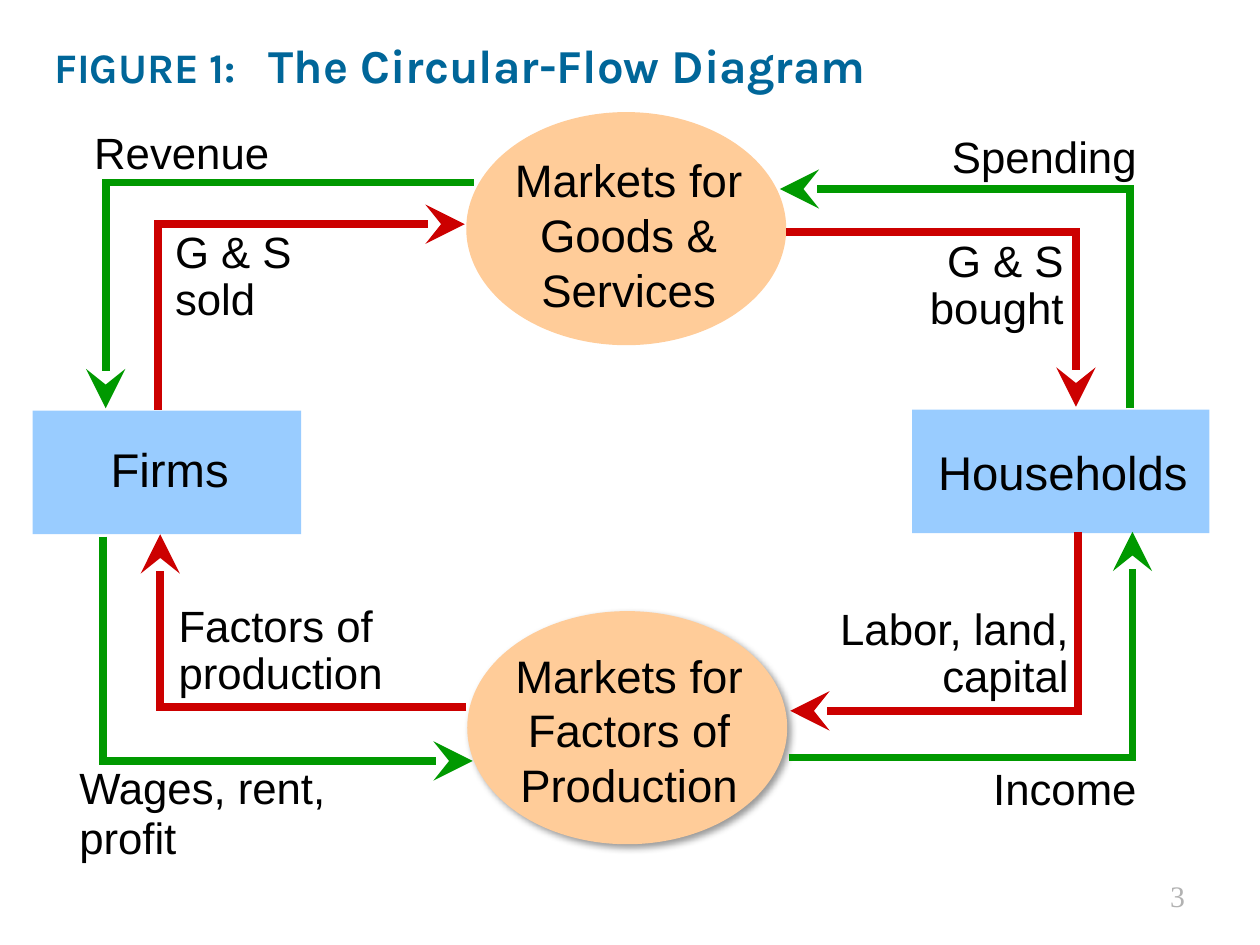
from lxml import etree
from pptx import Presentation
from pptx import util as u
from pptx.dml.color import RGBColor
from pptx.enum import shapes, text
from pptx.oxml.ns import qn

TITLE_BLUE = RGBColor(0x00, 0x66, 0x99)
PEACH = RGBColor(0xFF, 0xCC, 0x99)
SKY = RGBColor(0x99, 0xCC, 0xFF)
MONEY_GREEN = RGBColor(0x00, 0x99, 0x00)
GOODS_RED = RGBColor(0xCC, 0x00, 0x00)
BLACK = RGBColor(0x00, 0x00, 0x00)
GRAY = RGBColor(0xB2, 0xB2, 0xB2)

LEFT, CENTER, RIGHT = text.PP_ALIGN.LEFT, text.PP_ALIGN.CENTER, text.PP_ALIGN.RIGHT
OVAL, BOX = shapes.MSO_SHAPE.OVAL, shapes.MSO_SHAPE.RECTANGLE
HALF_LINE = 0.08

NODES = [
    (OVAL, PEACH, (9.4, 2.26, 6.45, 4.7), "Markets for Goods & Services", (9.65, 2.95, 6.05, 3.56), 26),
    (OVAL, PEACH, (9.42, 12.32, 6.45, 4.7), "Markets for Factors of Production", (9.32, 12.93, 6.73, 3.56), 26),
    (BOX, SKY, (18.39, 8.26, 5.99, 2.49), "Households", (18.54, 8.81, 5.77, 1.4), 27),
    (BOX, SKY, (0.66, 8.28, 5.41, 2.49), "Firms", (1.17, 8.76, 4.5, 1.4), 27),
]

FLOWS = [
    (MONEY_GREEN, [(9.55, 3.68), (2.13, 3.68), (2.13, 8.23)],
     "Revenue", (1.65, 2.41, 8.03, 1.32), LEFT, 1),
    (GOODS_RED, [(3.18, 8.26), (3.18, 4.52), (9.37, 4.52)],
     "G & S sold", (3.28, 4.52, 3.63, 2.16), LEFT, 0.9),
    (MONEY_GREEN, [(22.78, 8.23), (22.78, 3.81), (15.72, 3.81)],
     "Spending", (16.51, 2.49, 6.65, 1.32), RIGHT, 1),
    (GOODS_RED, [(15.85, 4.67), (21.69, 4.67), (21.69, 8.2)],
     "G & S bought", (18.06, 4.7, 3.63, 2.16), RIGHT, 0.9),
    (GOODS_RED, [(21.74, 10.72), (21.74, 14.33), (15.93, 14.33)],
     "Labor, land, capital", (16.23, 12.12, 5.56, 2.16), RIGHT, 0.9),
    (MONEY_GREEN, [(15.9, 15.27), (22.83, 15.27), (22.83, 10.72)],
     "Income", (16.84, 15.24, 6.32, 1.32), RIGHT, 1),
    (GOODS_RED, [(9.4, 14.25), (3.23, 14.25), (3.23, 10.77)],
     "Factors of production", (3.35, 12.07, 5.56, 2.16), LEFT, 0.9),
    (MONEY_GREEN, [(2.08, 10.82), (2.08, 15.34), (9.53, 15.34)],
     "Wages, rent, profit", (1.35, 15.29, 6.2, 2.26), LEFT, 0.95),
]


def cm(values):
    """Turn numbers in centimetres into lengths."""
    return [u.Cm(value) for value in values]


def add_title(slide):
    """Fill the title placeholder with the figure number and its name."""
    title = slide.shapes.title
    title.left, title.top, title.width, title.height = cm((0.84, 0.46, 22.86, 1.7))
    frame = title.text_frame
    frame.vertical_anchor = text.MSO_ANCHOR.MIDDLE
    frame.auto_size = text.MSO_AUTO_SIZE.NONE
    paragraph = frame.paragraphs[0]
    paragraph.alignment = LEFT
    for words, size in (("FIGURE 1:\t", 24), ("The Circular-Flow Diagram", 27)):
        run = paragraph.add_run()
        run.text = words
        run.font.size = u.Pt(size)
        run.font.name = "Karla"
        run.font.bold = True
        run.font.color.rgb = TITLE_BLUE
    tabs = etree.SubElement(paragraph._p.get_or_add_pPr(), qn("a:tabLst"))
    etree.SubElement(tabs, qn("a:tab"), pos=str(u.Cm(4.32)), algn="l")


def add_label(slide, words, place, size, align, spacing=1, font="Arial", color=BLACK):
    """Add a wrapped text box."""
    frame = slide.shapes.add_textbox(*cm(place)).text_frame
    frame.word_wrap = True
    paragraph = frame.paragraphs[0]
    paragraph.text = words
    paragraph.alignment = align
    paragraph.line_spacing = spacing
    paragraph.font.name = font
    paragraph.font.size = u.Pt(size)
    paragraph.font.color.rgb = color


def add_node(slide, kind, fill, place, words, label_place, size):
    """Add a filled shape with its label and return the shape."""
    shape = slide.shapes.add_shape(kind, *cm(place))
    shape.shadow.inherit = False
    shape.fill.solid()
    shape.fill.fore_color.rgb = fill
    shape.line.fill.background()
    add_label(slide, words, label_place, size, CENTER)
    return shape


def add_shadow(shape):
    """Give a shape a soft shadow to the lower right."""
    effects = shape._element.spPr.find(qn("a:effectLst"))
    shadow = etree.SubElement(effects, qn("a:outerShdw"), blurRad=str(u.Pt(4)),
                              dist=str(u.Pt(3)), dir="2700000", algn="tl", rotWithShape="0")
    color = etree.SubElement(shadow, qn("a:srgbClr"), val=str(BLACK))
    etree.SubElement(color, qn("a:alpha"), val="40000")


def add_line(slide, start, end, color, arrow=False):
    """Add a thick straight line, with an arrowhead at its end if asked."""
    line = slide.shapes.add_connector(shapes.MSO_CONNECTOR.STRAIGHT, *cm(start + end))
    line.line.color.rgb = color
    line.line.width = u.Pt(4.5)
    if arrow:
        etree.SubElement(line.line._get_or_add_ln(), qn("a:tailEnd"),
                         type="stealth", w="lg", len="lg")
    etree.SubElement(line._element.spPr, qn("a:effectLst"))


def beyond(start, corner):
    """Lengthen a leg by half a line width so that the corner closes."""
    return tuple(c + HALF_LINE * ((c > s) - (c < s)) for s, c in zip(start, corner))


def add_flow(slide, color, points, words, place, align, spacing):
    """Add a two-legged arrow and its label."""
    start, corner, end = points
    add_line(slide, start, beyond(start, corner), color)
    add_line(slide, corner, end, color, arrow=True)
    add_label(slide, words, place, 25, align, spacing)


def main():
    """Build the circular-flow slide."""
    presentation = Presentation()
    presentation.slide_width, presentation.slide_height = cm((25.4, 19.05))
    slide = presentation.slides.add_slide(presentation.slide_layouts[5])
    add_title(slide)
    goods, factors, households, firms = [add_node(slide, *node) for node in NODES]
    add_shadow(factors)
    for flow in FLOWS:
        add_flow(slide, *flow)
    add_label(slide, "3", (20.96, 17.58, 3.18, 0.99), 17, RIGHT,
              font="Times New Roman", color=GRAY)
    presentation.save("out.pptx")


if __name__ == "__main__":
    main()
